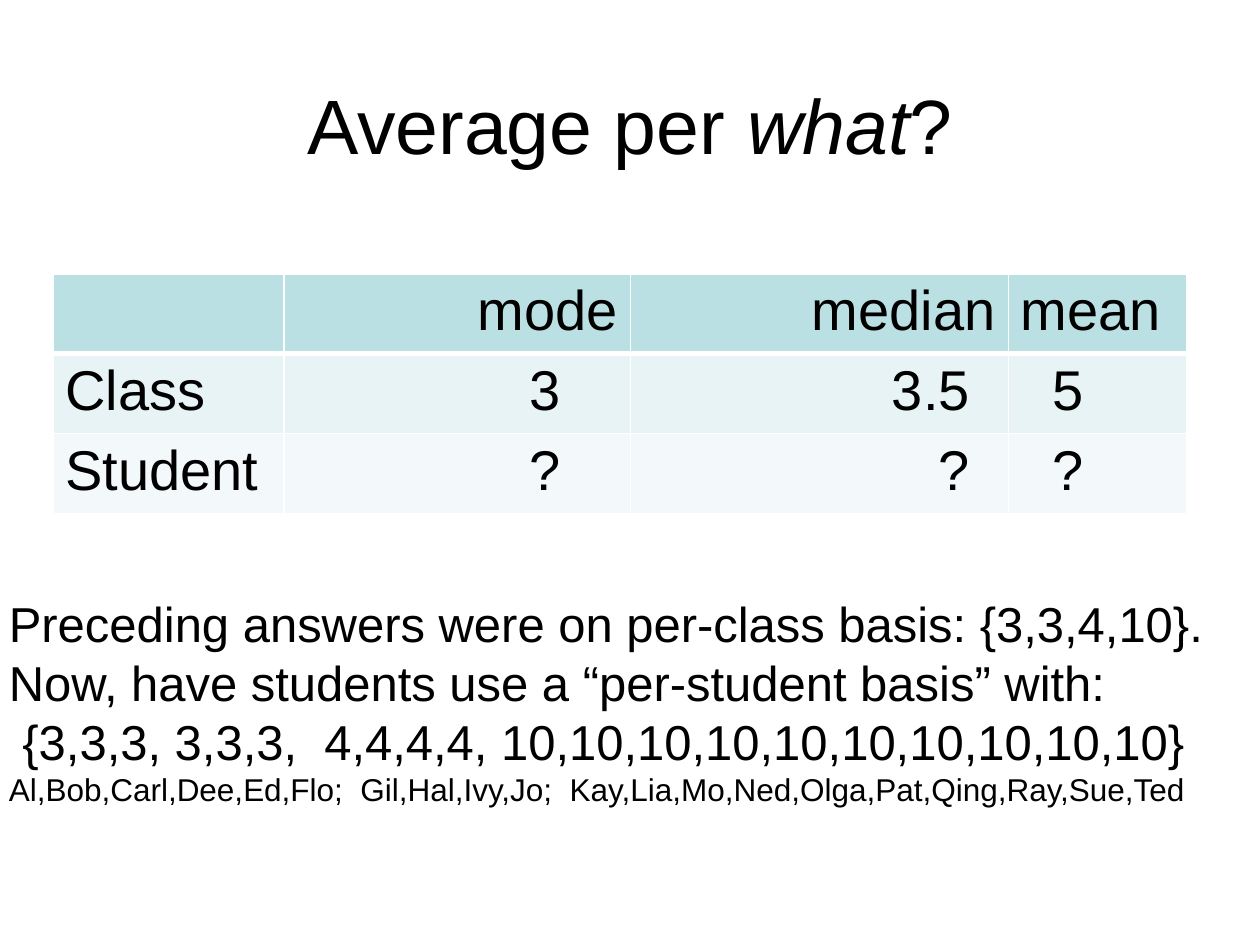
from lxml import etree
from pptx import Presentation
from pptx.dml.color import RGBColor
from pptx.enum.text import MSO_ANCHOR, PP_ALIGN
from pptx.oxml.ns import qn
from pptx.util import Pt


def add_run(p, text, size, italic=False):
    r = p.add_run()
    r.text = text
    r.font.name = "Arial"
    r.font.size = Pt(size)
    r.font.italic = italic
    r.font.color.rgb = RGBColor.from_string("000000")


def set_borders(cell, widths):
    """Give the cell white borders; widths maps a:ln* side names to points."""
    tc_pr = cell._tc.get_or_add_tcPr()
    for i, (side, width) in enumerate(widths.items()):
        ln = etree.Element(qn(f"a:{side}"), w=str(Pt(width)))
        fill = etree.SubElement(ln, qn("a:solidFill"))
        etree.SubElement(fill, qn("a:srgbClr"), val="FFFFFF")
        tc_pr.insert(i, ln)  # borders come before the fill


prs = Presentation()
prs.slide_width, prs.slide_height = Pt(720), Pt(540)
s = prs.slides.add_slide(prs.slide_layouts[6])

# Title
tf = s.shapes.add_textbox(Pt(36), Pt(21.6), Pt(648), Pt(98.6)).text_frame
tf.word_wrap = True
tf.vertical_anchor = MSO_ANCHOR.MIDDLE
p = tf.paragraphs[0]
p.alignment = PP_ALIGN.CENTER
for text, italic in [("Average per ", False), ("what", True), ("?", False)]:
    add_run(p, text, 44, italic)

# Table of averages: each cell is its text and its indent
rows = [
    [("", 0), ("mode", 0), ("median", 0), ("mean", 0)],
    [("Class", 0), ("3", 133.4), ("3.5", 142.3), ("5", 17.8)],
    [("Student", 0), ("?", 133.4), ("?", 169), ("?", 17.8)],
]
row_fills = ["BBE0E3", "E7F3F4", "F3F9FA"]
col_widths = [132, 198, 216, 102]
row_height = 45.5
table = s.shapes.add_table(len(rows), len(col_widths), Pt(30.2), Pt(156.5),
                           Pt(sum(col_widths)), Pt(row_height * len(rows))).table
for col, width in zip(table.columns, col_widths):
    col.width = Pt(width)
for i, (row, fill) in enumerate(zip(rows, row_fills)):
    table.rows[i].height = Pt(row_height)
    for j, (text, indent) in enumerate(row):
        cell = table.cell(i, j)
        cell.fill.solid()
        cell.fill.fore_color.rgb = RGBColor.from_string(fill)
        set_borders(cell, {"lnL": 1, "lnR": 1, "lnT": 3 if i == 1 else 1,
                           "lnB": 3 if i == 0 else 1})
        cell.margin_left = Pt(7.2 + indent)
        p = cell.text_frame.paragraphs[0]
        p.alignment = PP_ALIGN.RIGHT if i == 0 and j in (1, 2) else PP_ALIGN.LEFT
        p.font.size = Pt(32)
        if text:
            add_run(p, text, 32)

# Explanation
notes = [
    ("Preceding answers were on per-class basis: {3,3,4,10}. "
     "Now, have students use a “per-student basis” with:", 28),
    (" {3,3,3, 3,3,3,  4,4,4,4, 10,10,10,10,10,10,10,10,10,10}", 28),
    ("Al,Bob,Carl,Dee,Ed,Flo;  Gil,Hal,Ivy,Jo;  "
     "Kay,Lia,Mo,Ned,Olga,Pat,Qing,Ray,Sue,Ted", 18),
]
tf = s.shapes.add_textbox(Pt(-2), Pt(335.5), Pt(720), Pt(143.3)).text_frame
tf.word_wrap = True
for i, (text, size) in enumerate(notes):
    p = tf.add_paragraph() if i else tf.paragraphs[0]
    add_run(p, text, size)

prs.save("out.pptx")
